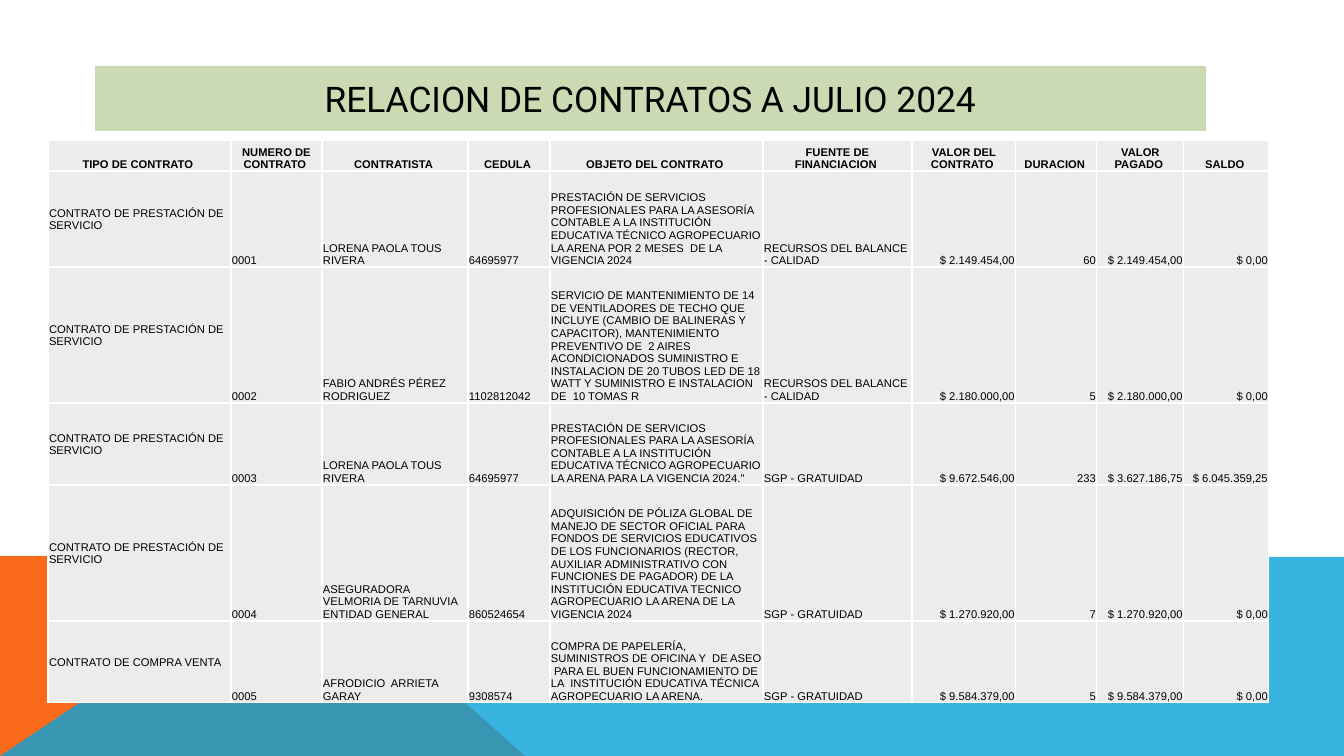
from lxml import etree
from pptx import Presentation
from pptx.dml.color import RGBColor
from pptx.enum.shapes import MSO_SHAPE
from pptx.enum.text import MSO_ANCHOR, PP_ALIGN
from pptx.oxml.ns import qn
from pptx.util import Pt

RECTANGLE = MSO_SHAPE.RECTANGLE
MIDDLE, BOTTOM = MSO_ANCHOR.MIDDLE, MSO_ANCHOR.BOTTOM
LEFT, CENTER, RIGHT = PP_ALIGN.LEFT, PP_ALIGN.CENTER, PP_ALIGN.RIGHT

SLIDE_SIZE = (1344, 756)
TITLE = "RELACION DE CONTRATOS A JULIO 2024"
TITLE_BOX = (95, 66, 1111, 65)
ORANGE_BAND = [(0, 756), (0, 556), (300, 556), (525, 756)]
BLUE_BAND = [(0, 756), (299, 556), (1344, 557), (1344, 756)]

TABLE_ORIGIN = (48, 140)
COLUMN_WIDTHS = [183, 91, 146, 82, 213, 149, 104, 81, 87, 85]
ROW_HEIGHTS = [31, 96, 136, 82, 136, 82]
FIRST_AMOUNT_COLUMN = 6

HEADERS = [
    "TIPO DE CONTRATO ", "NUMERO DE CONTRATO ", "CONTRATISTA ", "CEDULA ",
    "OBJETO DEL CONTRATO ", "FUENTE DE FINANCIACION ", "VALOR DEL CONTRATO ",
    "DURACION ", "VALOR PAGADO ", "SALDO ",
]
SERVICE = "CONTRATO DE PRESTACIÓN DE SERVICIO"
PURCHASE = "CONTRATO DE COMPRA VENTA"
BALANCE = "RECURSOS DEL BALANCE - CALIDAD"
FREE_FUND = "SGP - GRATUIDAD"
ADVISORY = (
    "PRESTACIÓN DE SERVICIOS PROFESIONALES PARA LA ASESORÍA CONTABLE A LA "
    "INSTITUCIÓN EDUCATIVA TÉCNICO AGROPECUARIO LA ARENA "
)
CONTRACTS = [
    (SERVICE, "0001", "LORENA PAOLA TOUS RIVERA", "64695977",
     ADVISORY + "POR 2 MESES  DE LA VIGENCIA 2024",
     BALANCE, "$ 2.149.454,00", "60", "$ 2.149.454,00", "$ 0,00"),
    (SERVICE, "0002", "FABIO ANDRÉS PÉREZ RODRIGUEZ", "1102812042",
     "SERVICIO DE MANTENIMIENTO DE 14 DE VENTILADORES DE TECHO QUE  INCLUYE "
     "(CAMBIO DE BALINERAS Y CAPACITOR), MANTENIMIENTO PREVENTIVO DE  2 AIRES "
     "ACONDICIONADOS SUMINISTRO E INSTALACION DE 20 TUBOS LED DE 18 WATT Y "
     "SUMINISTRO E INSTALACION DE  10 TOMAS R",
     BALANCE, "$ 2.180.000,00", "5", "$ 2.180.000,00", "$ 0,00"),
    (SERVICE, "0003", "LORENA PAOLA TOUS RIVERA", "64695977",
     ADVISORY + 'PARA LA VIGENCIA 2024."',
     FREE_FUND, "$ 9.672.546,00", "233", "$ 3.627.186,75", "$ 6.045.359,25"),
    (SERVICE, "0004", "ASEGURADORA VELMORIA DE TARNUVIA ENTIDAD GENERAL", "860524654",
     "ADQUISICIÓN DE PÓLIZA GLOBAL DE MANEJO DE SECTOR OFICIAL PARA FONDOS DE "
     "SERVICIOS EDUCATIVOS DE LOS FUNCIONARIOS (RECTOR, AUXILIAR ADMINISTRATIVO "
     "CON FUNCIONES DE PAGADOR) DE LA INSTITUCIÓN EDUCATIVA TECNICO AGROPECUARIO "
     "LA ARENA DE LA VIGENCIA 2024",
     FREE_FUND, "$ 1.270.920,00", "7", "$ 1.270.920,00", "$ 0,00"),
    (PURCHASE, "0005", "AFRODICIO  ARRIETA GARAY", "9308574",
     "COMPRA DE PAPELERÍA, SUMINISTROS DE OFICINA Y  DE ASEO  PARA EL BUEN "
     "FUNCIONAMIENTO DE LA  INSTITUCIÓN EDUCATIVA TÉCNICA AGROPECUARIO LA ARENA.",
     FREE_FUND, "$ 9.584.379,00", "5", "$ 9.584.379,00", "$ 0,00"),
]


def px(length):
    return round(length * 12192000 / 1344)


def paint(fill, color):
    fill.solid()
    fill.fore_color.rgb = RGBColor.from_string(color)


def write(frame, text, font, size, align, bold=False):
    frame.text = text
    para = frame.paragraphs[0]
    para.alignment = align
    for span in para.runs:
        span.font.name = font
        span.font.size = Pt(size)
        span.font.bold = bold
        span.font.color.rgb = RGBColor.from_string("000000")


def add_band(page, points, color, opacity=100):
    corners = [(px(x), px(y)) for x, y in points]
    builder = page.shapes.build_freeform(*corners[0], scale=1.0)
    builder.add_line_segments(corners[1:], close=True)
    band = builder.convert_to_shape()
    band.shadow.inherit = False
    band.line.fill.background()
    paint(band.fill, color)
    if opacity < 100:
        tint = band.fill._xPr.find(".//" + qn("a:srgbClr"))
        etree.SubElement(tint, qn("a:alpha")).set("val", str(opacity * 1000))


def add_title(page):
    box = page.shapes.add_shape(RECTANGLE, *map(px, TITLE_BOX))
    box.shadow.inherit = False
    box.line.fill.background()
    paint(box.fill, "CCDAB3")
    box.text_frame.word_wrap = True
    box.text_frame.vertical_anchor = MIDDLE
    write(box.text_frame, TITLE, "Roboto", 25.2, CENTER)


def add_borders(cell, color):
    properties = cell._tc.get_or_add_tcPr()
    for position, side in enumerate(("a:lnL", "a:lnR", "a:lnT", "a:lnB")):
        border = etree.Element(qn(side), w=str(Pt(1)))
        properties.insert(position, border)
        solid = etree.SubElement(border, qn("a:solidFill"))
        etree.SubElement(solid, qn("a:srgbClr")).set("val", color)


def add_contracts(page):
    rows = [HEADERS] + CONTRACTS
    size = (sum(COLUMN_WIDTHS), sum(ROW_HEIGHTS))
    table = page.shapes.add_table(
        len(rows), len(HEADERS), *map(px, TABLE_ORIGIN + size)).table
    for column, width in zip(table.columns, COLUMN_WIDTHS):
        column.width = px(width)
    for row, height in zip(table.rows, ROW_HEIGHTS):
        row.height = px(height)
    for r, texts in enumerate(rows):
        for c, text in enumerate(texts):
            cell = table.cell(r, c)
            cell.margin_left = cell.margin_right = cell.margin_top = px(1)
            cell.margin_bottom = 0
            cell.vertical_anchor = MIDDLE if r and c == 0 else BOTTOM
            body_align = RIGHT if c >= FIRST_AMOUNT_COLUMN else LEFT
            write(cell.text_frame, text, "Arial", 8,
                  body_align if r else CENTER, bold=r == 0)
            paint(cell.fill, "ECECEC")
            add_borders(cell, "FFFFFF")


def main():
    deck = Presentation()
    deck.slide_width, deck.slide_height = map(px, SLIDE_SIZE)
    page = deck.slides.add_slide(deck.slide_layouts[6])
    paint(page.background.fill, "FFFFFF")
    add_band(page, ORANGE_BAND, "F96A1B")
    add_band(page, BLUE_BAND, "08A1D9", opacity=80)
    add_title(page)
    add_contracts(page)
    deck.save("out.pptx")


if __name__ == "__main__":
    main()
